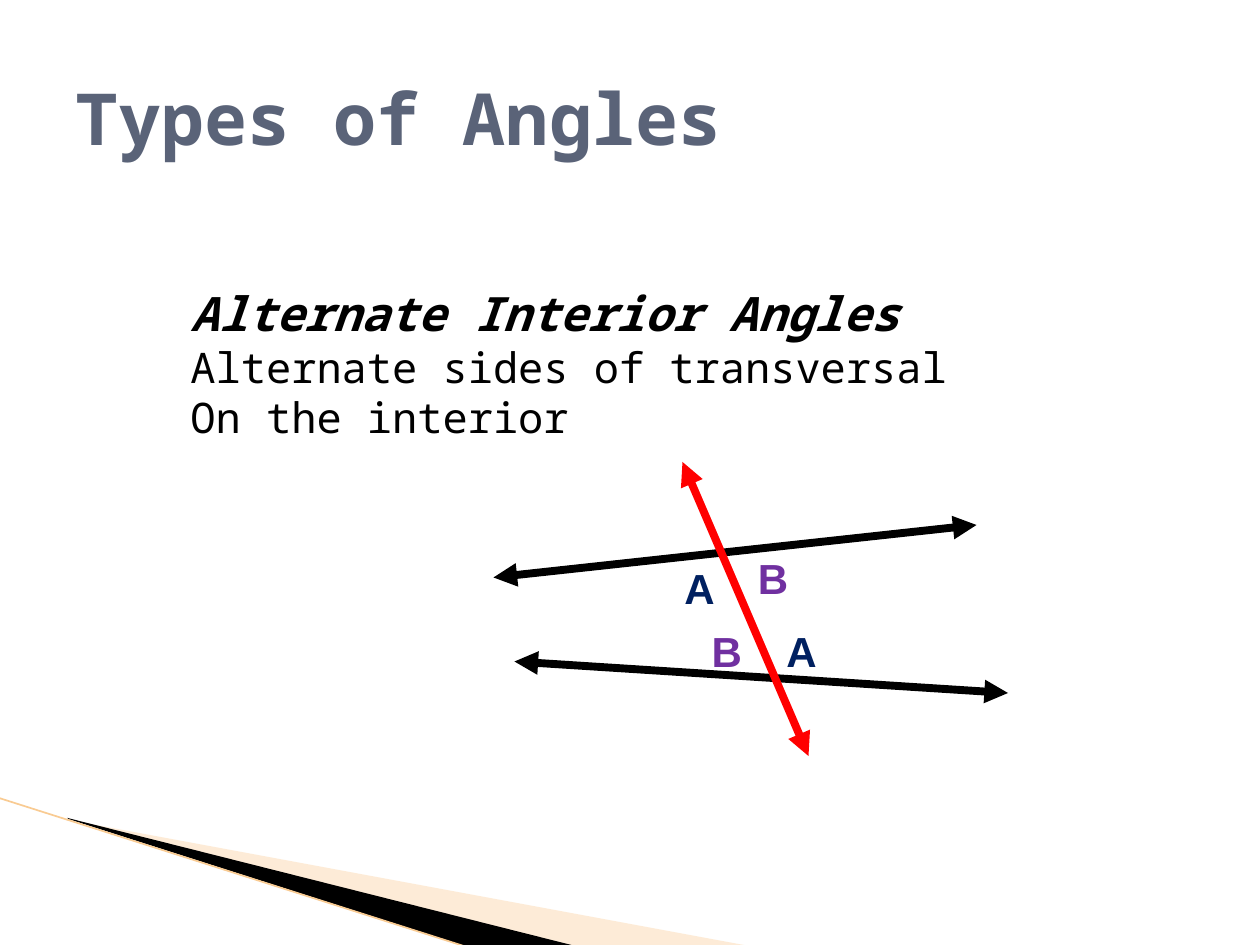
from lxml.etree import SubElement
from pptx import Presentation
from pptx.dml.color import RGBColor
from pptx.enum.shapes import MSO_CONNECTOR
from pptx.enum.text import MSO_ANCHOR, MSO_AUTO_SIZE, PP_ALIGN
from pptx.oxml.ns import qn
from pptx.util import Inches, Pt


def color(value):
    """Turn a hex string into a colour."""
    return RGBColor.from_string(value)


def write(paragraph, text, font="Noto Sans Mono", size=24, fill="000000", bold=False, italic=False):
    """Add formatted text to a paragraph."""
    run = paragraph.add_run()
    run.text = text
    run.font.name = font
    run.font.size = Pt(size)
    run.font.bold = bold
    run.font.italic = italic
    run.font.color.rgb = color(fill)


class AngleSlide:
    """Hold the style and the slide, measured on a grid of 120 by 90 cells."""

    cell = Inches(10) / 120
    navy = "002060"
    purple = "7030A0"
    slate = "5A6378"

    def __init__(self, presentation):
        """Add a slide with a title and a body."""
        self.slide = presentation.slides.add_slide(presentation.slide_layouts[1])
        self.shapes = self.slide.shapes

    def grid(self, *cells):
        """Convert grid cells to lengths."""
        return [round(value * self.cell) for value in cells]

    def wedge(self, points, fill, opacity=100):
        """Draw a filled polygon through grid points."""
        corners = [self.grid(*point) for point in points]
        builder = self.shapes.build_freeform(*corners[0])
        builder.add_line_segments(corners[1:], close=True)
        shape = builder.convert_to_shape()
        shape.shadow.inherit = False
        shape.fill.solid()
        shape.fill.fore_color.rgb = color(fill)
        shape.line.fill.background()
        if opacity < 100:
            fill_color = shape._element.spPr.find(".//" + qn("a:srgbClr"))
            SubElement(fill_color, qn("a:alpha"), val=str(opacity * 1000))

    def line(self, start, end, stroke="000000", width=4.5, arrows=True):
        """Draw a straight line, with arrowheads at both ends if wanted."""
        connector = self.shapes.add_connector(MSO_CONNECTOR.STRAIGHT, *self.grid(*start, *end))
        connector.line.color.rgb = color(stroke)
        connector.line.width = Pt(width)
        properties = connector._element.spPr
        if arrows:
            for tag in ("a:headEnd", "a:tailEnd"):
                SubElement(properties.find(qn("a:ln")), qn(tag), type="triangle")
        SubElement(properties, qn("a:effectLst"))

    def place(self, placeholder, box):
        """Move a placeholder to a grid box, in front of earlier shapes."""
        placeholder.left, placeholder.top, placeholder.width, placeholder.height = self.grid(*box)
        element = placeholder._element
        element.getparent().append(element)
        placeholder.text_frame.auto_size = MSO_AUTO_SIZE.NONE
        return placeholder.text_frame

    def title(self, text, box):
        """Fill the title placeholder."""
        frame = self.place(self.shapes.title, box)
        frame.vertical_anchor = MSO_ANCHOR.MIDDLE
        frame.paragraphs[0].alignment = PP_ALIGN.LEFT
        write(frame.paragraphs[0], text, size=41, fill=self.slate, bold=True)

    def body(self, heading, lines, box):
        """Fill the body placeholder with a heading and plain lines."""
        frame = self.place(self.slide.placeholders[1], box)
        frame.vertical_anchor = MSO_ANCHOR.TOP
        for index, text in enumerate([heading, *lines]):
            paragraph = frame.paragraphs[0] if index == 0 else frame.add_paragraph()
            properties = paragraph._p.get_or_add_pPr()
            properties.set("marL", str(Inches(0.4)))
            properties.set("indent", str(Inches(-0.28)))
            SubElement(properties, qn("a:buNone"))
            paragraph.space_before = Pt(0)
            is_heading = index == 0
            write(paragraph, text, size=27 if is_heading else 24, bold=is_heading, italic=is_heading)

    def label(self, text, left, top, fill):
        """Write the letter of an angle."""
        frame = self.shapes.add_textbox(*self.grid(left, top, 5.4, 6)).text_frame
        frame.word_wrap = False
        frame.auto_size = MSO_AUTO_SIZE.SHAPE_TO_FIT_TEXT
        write(frame.paragraphs[0], text, font="Arial", fill=fill, bold=True)


def main():
    """Build and save the slide."""
    presentation = Presentation()
    presentation.slide_width, presentation.slide_height = Inches(10), Inches(7.5)
    angles = AngleSlide(presentation)

    angles.wedge([(6.6, 78.1), (71.4, 90.1), (54.7, 90.1), (6.6, 78)], "FCCF9B", opacity=40)
    angles.wedge([(6.4, 77.9), (54.8, 90.1), (44.6, 90.2), (6.5, 78)], "000000")
    angles.line((-0.1, 76), (44.5, 90.2), "F9CB92", width=0.95, arrows=False)

    angles.body(
        "Alternate Interior Angles",
        ["Alternate sides of transversal", "On the interior"],
        (15.5, 26.5, 102, 22.5),
    )
    angles.title("Types of Angles", (6, 3.6, 108, 15))

    angles.line((47, 55), (93, 50))
    angles.line((49, 63), (96, 66))
    angles.line((65, 44), (77, 72), "FF0000")

    angles.label("A", 64, 53, angles.navy)
    angles.label("A", 73.7, 59, angles.navy)
    angles.label("B", 66.6, 59, angles.purple)
    angles.label("B", 71, 52, angles.purple)

    presentation.save("out.pptx")


if __name__ == "__main__":
    main()
